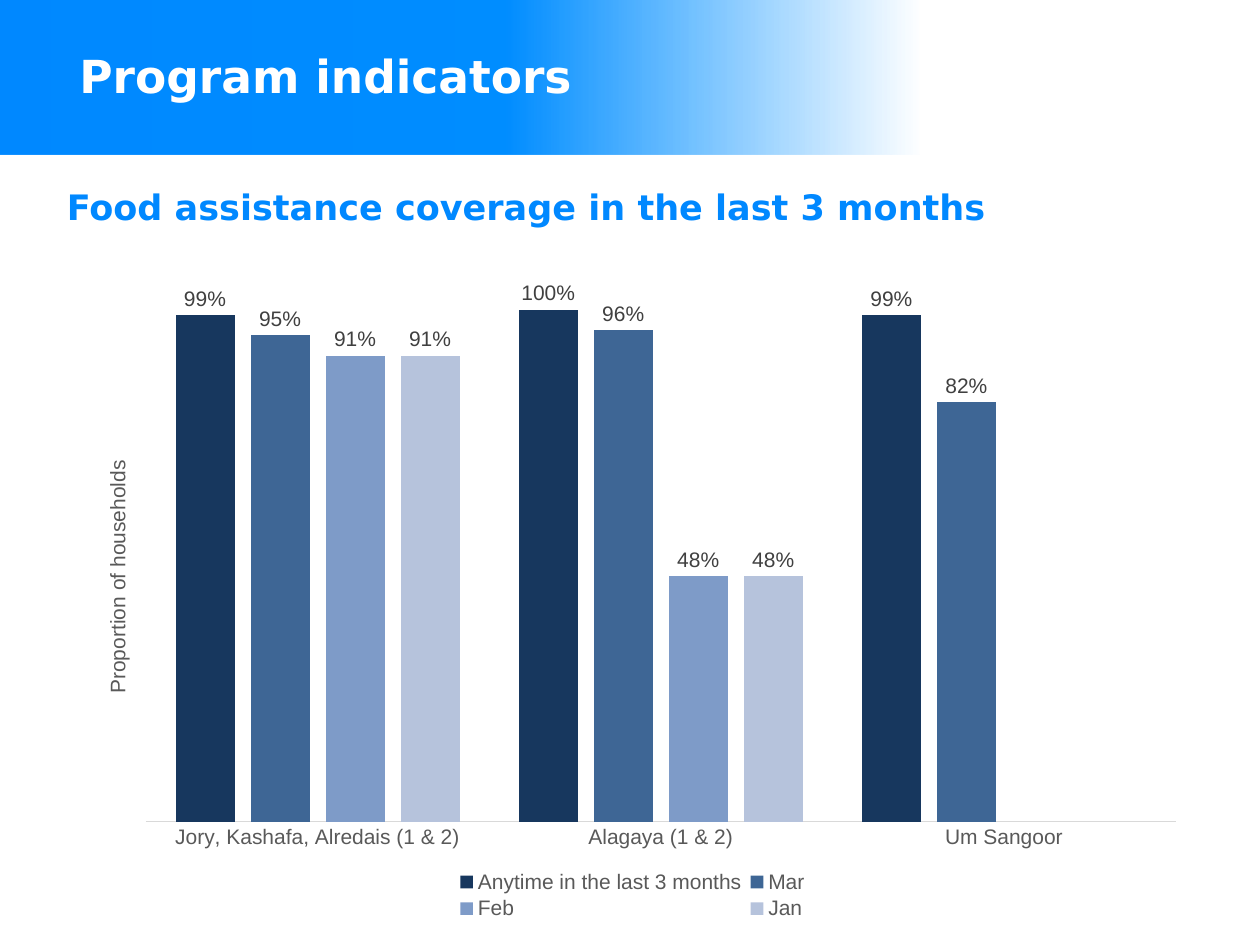
import pptx
import pptx.chart.data
import pptx.dml.color
import pptx.enum.chart
import pptx.enum.shapes
import pptx.enum.text
import pptx.oxml
import pptx.oxml.ns
import pptx.util

SERIES = [
    ("Anytime in the last 3 months", (0.99, 1, 0.99), "17375E"),
    ("Mar", (0.95, 0.96, 0.82), "3E6695"),
    ("Feb", (0.91, 0.48, None), "7E9BC8"),
    ("Jan", (0.91, 0.48, None), "B6C3DC"),
]
AREAS = ["Jory, Kashafa, Alredais (1 & 2)", "Alagaya (1 & 2)", "Um Sangoor"]
NS = pptx.oxml.ns.nsdecls


def tint(code):
    return pptx.dml.color.RGBColor.from_string(code)


def style(font, size=12, color="595959", name="Arial", bold=False):
    font.size = pptx.util.Pt(size)
    font.name = name
    font.bold = bold
    font.color.rgb = tint(color)


def write(frame, text, **form):
    para = frame.paragraphs[0]
    run = para.add_run()
    run.text = text
    style(run.font, **form)
    return para


def place(node, index, x, y, w=None, h=None, inner=False):
    """Fix a chart part at shares of the chart's size."""
    for old in node.findall(pptx.oxml.ns.qn("c:layout")):
        node.remove(old)
    tags = '<c:layoutTarget val="inner"/>' if inner else ""
    tags += '<c:xMode val="edge"/><c:yMode val="edge"/>'
    for tag, share in zip("xywh", (x, y, w, h)):
        if share is not None:
            tags += f'<c:{tag} val="{share}"/>'
    node.insert(index, pptx.oxml.parse_xml(
        f'<c:layout {NS("c")}><c:manualLayout>{tags}</c:manualLayout></c:layout>'))


class Deck:
    """Holds the style and the current slide; lengths are shares of its size."""
    face = "DejaVu Sans"
    blue = "0088FF"

    def __init__(self):
        self.file = pptx.Presentation()
        self.file.slide_width = pptx.util.Inches(10)
        self.file.slide_height = pptx.util.Inches(7.5)
        self.slide = self.file.slides.add_slide(self.file.slide_layouts[5])

    def box(self, x, y, w, h):
        wide, high = self.file.slide_width, self.file.slide_height
        return int(x * wide), int(y * high), int(w * wide), int(h * high)

    def band(self, *area):
        shape = self.slide.shapes.add_shape(
            pptx.enum.shapes.MSO_SHAPE.RECTANGLE, *self.box(*area))
        shape.shadow.inherit = False
        shape.line.fill.background()
        shape.fill.gradient()
        shape.fill.gradient_angle = 0
        stops = shape._element.spPr.find(
            pptx.oxml.ns.qn("a:gradFill")).find(pptx.oxml.ns.qn("a:gsLst"))
        for old in list(stops):
            stops.remove(old)
        for pos, color, alpha in ((0, self.blue, 100), (40, "008DFF", 100),
                                  (73, "0091FF", 0)):
            stops.append(pptx.oxml.parse_xml(
                f'<a:gs {NS("a")} pos="{pos * 1000}"><a:srgbClr val="{color}">'
                f'<a:alpha val="{alpha * 1000}"/></a:srgbClr></a:gs>'))
        self.slide.shapes._spTree.insert(2, shape._element)

    def title(self, text, *area):
        shape = self.slide.shapes.title
        shape.left, shape.top, shape.width, shape.height = self.box(*area)
        frame = shape.text_frame
        frame.margin_top = 0
        frame.margin_bottom = pptx.util.Inches(0.07)
        frame.vertical_anchor = pptx.enum.text.MSO_ANCHOR.MIDDLE
        para = write(frame, text, size=26, color="FFFFFF", name=self.face, bold=True)
        para.alignment = pptx.enum.text.PP_ALIGN.LEFT

    def head(self, text, *area):
        frame = self.slide.shapes.add_textbox(*self.box(*area)).text_frame
        frame.word_wrap = True
        frame.margin_left = frame.margin_top = 0
        frame.margin_right = frame.margin_bottom = 0
        write(frame, text, size=20, color=self.blue, name=self.face, bold=True)

    def chart(self, label, *area):
        kinds = pptx.enum.chart
        data = pptx.chart.data.CategoryChartData(number_format="0%")
        data.categories = AREAS
        for name, values, _ in SERIES:
            data.add_series(name, values)
        chart = self.slide.shapes.add_chart(
            kinds.XL_CHART_TYPE.COLUMN_CLUSTERED, *self.box(*area), data).chart
        style(chart.font, color="000000")
        chart.has_title = False
        place(chart._chartSpace.chart.plotArea, 0, 0.07, 0.04, 0.91, 0.8, inner=True)

        plot = chart.plots[0]
        plot.gap_width, plot.overlap, plot.vary_by_categories = 100, -27, False
        for bars, (_, _, color) in zip(plot.series, SERIES):
            bars.format.fill.solid()
            bars.format.fill.fore_color.rgb = tint(color)
            marks = bars.data_labels
            marks.show_value = True
            marks.position = kinds.XL_LABEL_POSITION.OUTSIDE_END
            marks.number_format = "0%"
            marks.number_format_is_linked = False
            style(marks.font, color="404040")

        base = chart.category_axis
        base.major_tick_mark = kinds.XL_TICK_MARK.NONE
        base.format.line.color.rgb = tint("D9D9D9")
        base.format.line.width = pptx.util.Pt(0.75)
        style(base.tick_labels.font)

        scale = chart.value_axis
        scale.minimum_scale, scale.maximum_scale, scale.major_unit = 0, 1, 0.25
        scale.has_major_gridlines = False
        scale.visible = False
        frame = scale.axis_title.text_frame
        write(frame, label)
        frame._txBody.bodyPr.set("rot", "-5400000")
        frame._txBody.bodyPr.set("vert", "horz")
        place(scale.axis_title._element, 1, 0.03, 0.27)

        chart.has_legend = True
        chart.legend.position = kinds.XL_LEGEND_POSITION.BOTTOM
        chart.legend.include_in_layout = False
        style(chart.legend.font)
        place(chart.legend._element, 1, 0.34, 0.91, 0.32, 0.09)


def main():
    deck = Deck()
    deck.band(0, 0, 1, 0.164)
    deck.title("Program indicators", 0.053, 0.017, 0.648, 0.135)
    deck.head("Food assistance coverage in the last 3 months", 0.053, 0.196, 0.898, 0.061)
    deck.chart("Proportion of households", 0.053, 0.299, 0.898, 0.679)
    deck.file.save("out.pptx")


if __name__ == "__main__":
    main()
